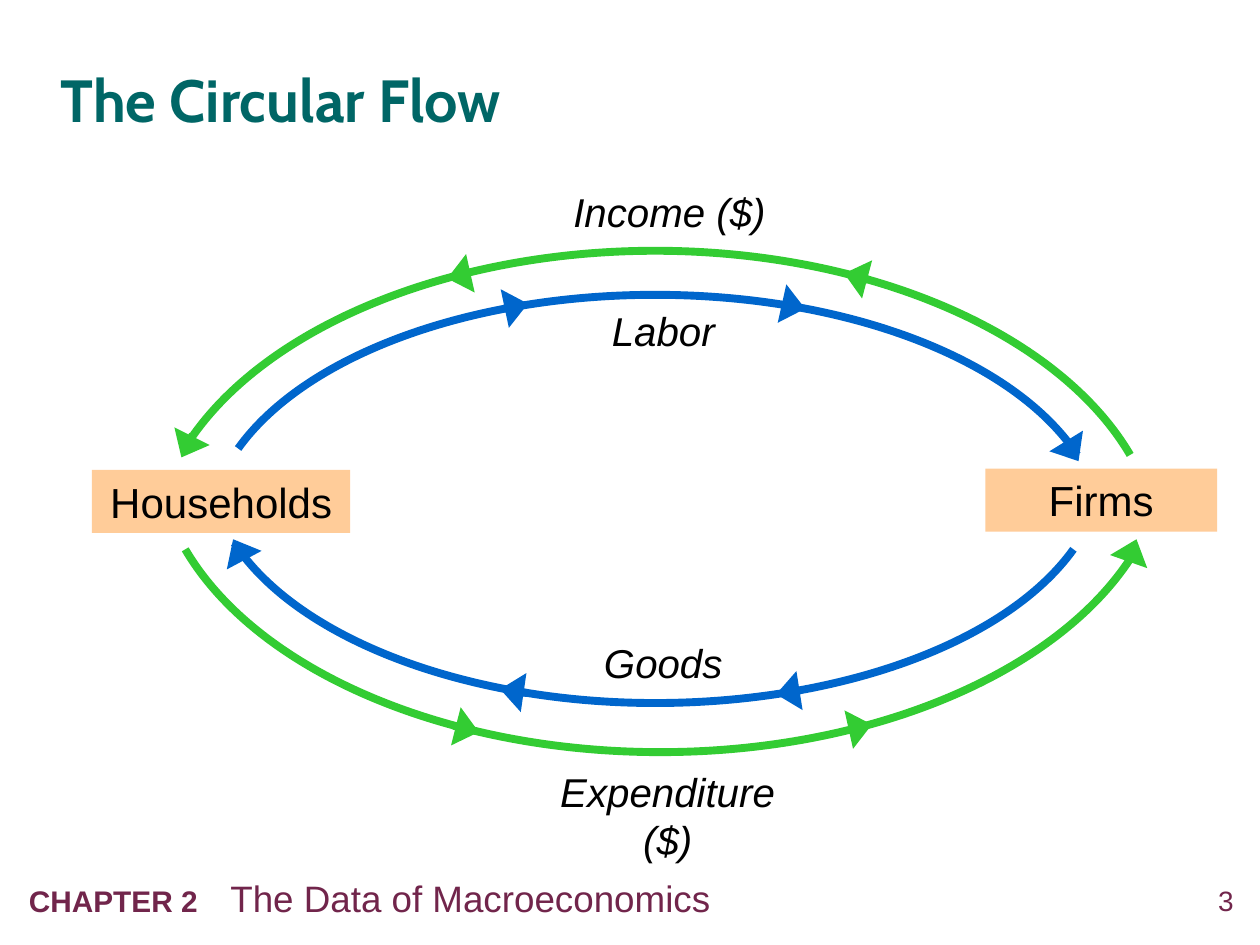
from lxml.etree import SubElement
from pptx import Presentation
from pptx.dml.color import RGBColor
from pptx.enum.shapes import MSO_CONNECTOR as Connector, MSO_SHAPE as Shape
from pptx.enum.text import MSO_ANCHOR as Anchor, PP_ALIGN as Align
from pptx.oxml.ns import qn
from pptx.util import Inches, Pt

BLACK = RGBColor(0x00, 0x00, 0x00)
TEAL = RGBColor(0x00, 0x66, 0x66)
PLUM = RGBColor(0x71, 0x25, 0x4B)
PEACH = RGBColor(0xFF, 0xCC, 0x99)
BLUE = RGBColor(0x00, 0x66, 0xCC)
GREEN = RGBColor(0x33, 0xCC, 0x33)

SECTORS = [
    ("Households", (0.73, 3.73, 2.05, 0.5)),
    ("Firms", (7.82, 3.72, 1.84, 0.5)),
]

FLOWS = [
    {
        "label": "Goods", "box": (4.31, 5.02, 1.91, 0.48), "color": BLUE,
        "arc": [(8.52, 4.36), (7.99, 5.1), (6.67, 5.58), (5.2, 5.58),
                (3.7, 5.58), (2.36, 5.07), (1.86, 4.31)],
        "arrows": [((1.93, 4.43), (1.85, 4.28)), ((4.18, 5.5), (3.97, 5.47)),
                   ((6.35, 5.48), (6.16, 5.51))],
    },
    {
        "label": "Labor", "box": (4.31, 2.38, 1.91, 0.48), "color": BLUE,
        "arc": [(1.89, 3.56), (2.42, 2.82), (3.73, 2.34), (5.2, 2.34),
                (6.7, 2.34), (8.04, 2.84), (8.55, 3.61)],
        "arrows": [((4, 2.45), (4.19, 2.41)), ((6.21, 2.41), (6.39, 2.45)),
                   ((8.48, 3.53), (8.56, 3.66))],
    },
    {
        "label": "Expenditure ($)", "box": (4.11, 6.04, 2.38, 0.48), "color": GREEN,
        "arc": [(8.98, 4.42), (8.38, 5.35), (6.9, 5.97), (5.24, 5.97),
                (3.55, 5.97), (2.04, 5.33), (1.47, 4.36)],
        "arrows": [((8.96, 4.45), (9.02, 4.28)), ((3.6, 5.76), (3.8, 5.81)),
                   ((6.74, 5.79), (6.92, 5.75))],
    },
    {
        "label": "Income ($)", "box": (4.36, 1.44, 1.91, 0.48), "color": GREEN,
        "arc": [(1.47, 3.55), (2.06, 2.61), (3.55, 1.99), (5.2, 1.99),
                (6.89, 1.99), (8.4, 2.64), (8.97, 3.61)],
        "arrows": [((6.89, 2.22), (6.7, 2.17)), ((3.73, 2.17), (3.55, 2.21)),
                   ((1.53, 3.45), (1.44, 3.63))],
    },
]

FLOW_WIDTH = Pt(4.5)


def inches(values):
    return [Inches(value) for value in values]


def add_run(paragraph, text, size, color, name="Arial", bold=False, italic=False):
    run = paragraph.add_run()
    run.text = text
    font = run.font
    font.name, font.size, font.bold, font.italic = name, Pt(size), bold, italic
    font.color.rgb = color


def add_text(shapes, box, align=Align.LEFT, inset=True):
    frame = shapes.add_textbox(*inches(box)).text_frame
    frame.word_wrap = True
    if not inset:
        frame.margin_left = frame.margin_right = 0
        frame.margin_top = frame.margin_bottom = 0
    paragraph = frame.paragraphs[0]
    paragraph.alignment = align
    return frame, paragraph


def bend_segments(freeform):
    outline = next(freeform.element.iter(qn("a:path")))
    segments = outline.findall(qn("a:lnTo"))
    for start in range(0, len(segments), 3):
        curve = SubElement(outline, qn("a:cubicBezTo"))
        for segment in segments[start:start + 3]:
            curve.append(segment[0])
            outline.remove(segment)


def add_arc(shapes, controls, color):
    builder = shapes.build_freeform(*inches(controls[0]))
    builder.add_line_segments([inches(point) for point in controls[1:]], close=False)
    arc = builder.convert_to_shape()
    bend_segments(arc)
    arc.shadow.inherit = False
    arc.fill.background()
    arc.line.color.rgb = color
    arc.line.width = FLOW_WIDTH


def add_arrow(shapes, start, end, color):
    arrow = shapes.add_connector(Connector.STRAIGHT, *inches(start + end))
    arrow.line.color.rgb = color
    arrow.line.width = FLOW_WIDTH
    properties = arrow.element.spPr
    SubElement(properties.find(qn("a:ln")), qn("a:tailEnd"),
               type="triangle", w="lg", len="med")
    SubElement(properties, qn("a:effectLst"))


def add_flow(slide, flow):
    shapes = slide.shapes.add_group_shape().shapes
    _, paragraph = add_text(shapes, flow["box"], Align.CENTER)
    add_run(paragraph, flow["label"], 23, BLACK, italic=True)
    add_arc(shapes, flow["arc"], flow["color"])
    for start, end in flow["arrows"]:
        add_arrow(shapes, start, end, flow["color"])


def add_sector(slide, label, box):
    shape = slide.shapes.add_shape(Shape.RECTANGLE, *inches(box))
    shape.shadow.inherit = False
    shape.fill.solid()
    shape.fill.fore_color.rgb = PEACH
    shape.line.fill.background()
    paragraph = shape.text_frame.paragraphs[0]
    paragraph.alignment = Align.CENTER
    add_run(paragraph, label, 24, BLACK)


def add_footer(slide):
    _, number = add_text(slide.shapes, (9.24, 7.01, 0.55, 0.32), Align.RIGHT, inset=False)
    add_run(number, "3", 16, PLUM)
    _, chapter = add_text(slide.shapes, (0.13, 6.9, 8.18, 0.45))
    add_run(chapter, "CHAPTER 2\t", 17, PLUM, bold=True)
    add_run(chapter, "The Data of Macroeconomics", 21, PLUM)
    properties = chapter._p.get_or_add_pPr()
    stops = SubElement(properties, qn("a:tabLst"))
    SubElement(stops, qn("a:tab"), pos=str(Inches(1.6)), algn="l")


def add_title(slide):
    frame, paragraph = add_text(slide.shapes, (0.48, 0.33, 9.52, 0.88), inset=False)
    frame.vertical_anchor = Anchor.MIDDLE
    paragraph.line_spacing = 1.05
    add_run(paragraph, "The Circular Flow", 34, TEAL, name="Cabin", bold=True)


def main():
    presentation = Presentation()
    presentation.slide_width, presentation.slide_height = inches((10, 7.5))
    slide = presentation.slides.add_slide(presentation.slide_layouts[6])
    add_footer(slide)
    add_title(slide)
    for label, box in SECTORS:
        add_sector(slide, label, box)
    for flow in FLOWS:
        add_flow(slide, flow)
    presentation.save("out.pptx")


if __name__ == "__main__":
    main()
